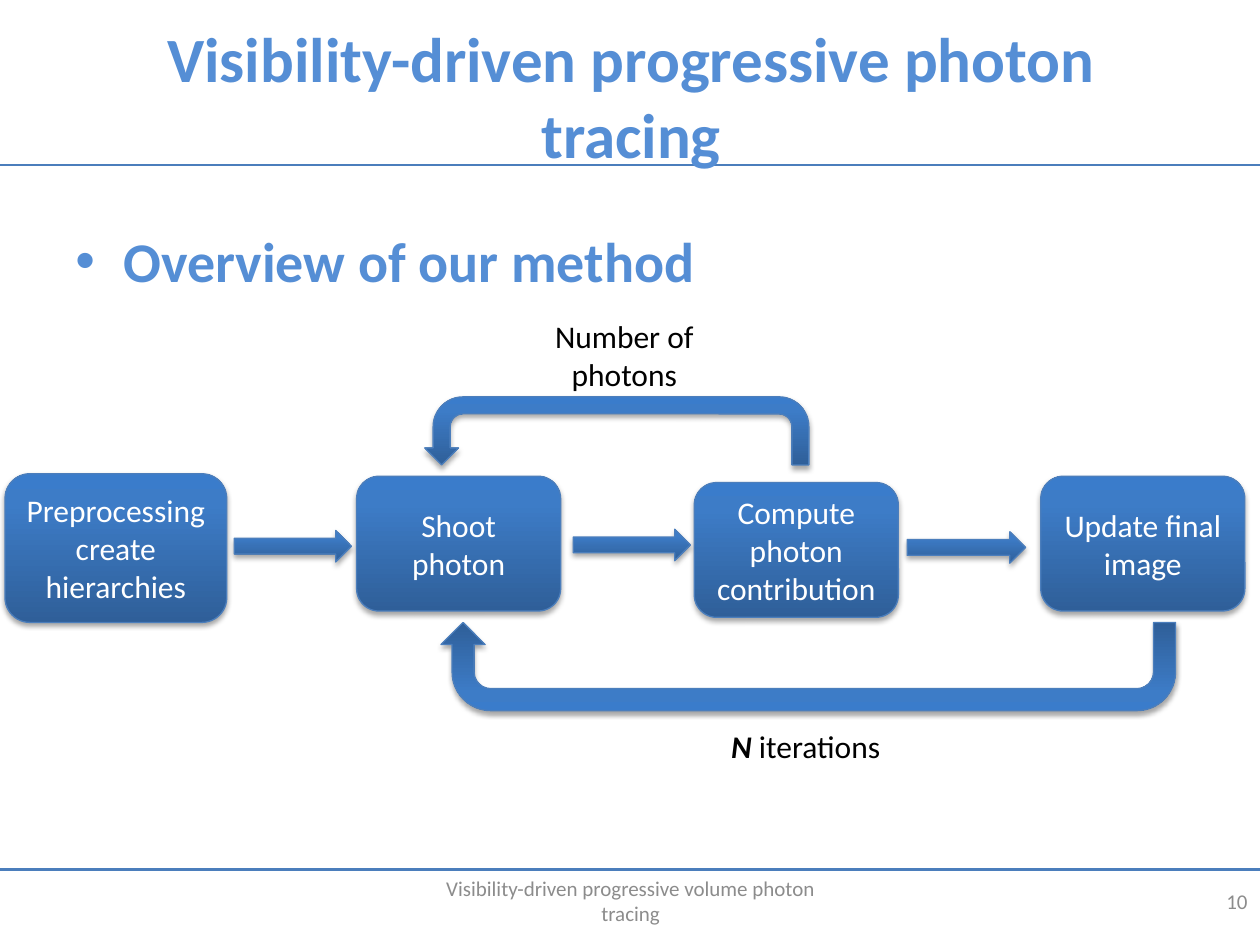
"""Build the method overview slide of a photon tracing talk."""
from lxml.etree import SubElement
from pptx import Presentation
from pptx.dml.color import RGBColor
from pptx.enum.shapes import MSO_CONNECTOR as Line, MSO_SHAPE as Shape
from pptx.enum.text import MSO_ANCHOR as Anchor, PP_ALIGN as Align
from pptx.oxml.ns import qn
from pptx.util import Inches, Pt

COLUMNS, ROWS = 10, 7.5
CELL = Inches(1)
RULE_ROWS = (6.9, 1.31)
EDGE = "4B7EBC"
GRADIENT = ((0, "2F5F99"), (80, "3D7CC7"), (100, "3A7CCB"))

HEADING = {"size": Pt(36), "bold": True, "color": "558ED5"}
TOPIC = {**HEADING, "size": Pt(32)}
LABEL = {"size": Pt(18), "color": "000000"}
VARIABLE = {**LABEL, "bold": True, "italic": True}
STEP = {"size": Pt(18), "color": "FFFFFF"}
FOOTER = {"size": Pt(12), "color": "8C8C8C"}

TEXTS = [
    ((0.51, 0.13, 9, 1.25), Anchor.MIDDLE, Align.CENTER,
     [("Visibility-driven progressive photon tracing", HEADING)]),
    ((0.5, 1.75, 9, 4.95), Anchor.TOP, Align.LEFT, [("Overview of our method", TOPIC)]),
    ((3.42, 6.95, 3.17, 0.4), Anchor.MIDDLE, Align.CENTER,
     [("Visibility-driven progressive volume photon tracing", FOOTER)]),
    ((7.67, 6.95, 2.33, 0.4), Anchor.MIDDLE, Align.RIGHT, [("10", FOOTER)]),
    ((4.12, 2.47, 1.67, 0.71), Anchor.TOP, Align.CENTER, [("Number of photons", LABEL)]),
    ((5.16, 5.72, 2.47, 0.4), Anchor.TOP, Align.CENTER,
     [("N ", VARIABLE), ("iterations", LABEL)]),
]
STEPS = [
    ((0.04, 3.76, 1.76, 1.18), ["Preprocessing", "create hierarchies"]),
    ((2.83, 3.78, 1.62, 1.07), ["Shoot photon"]),
    ((5.51, 3.83, 1.62, 1.07), ["Compute photon contribution"]),
    ((8.26, 3.78, 1.62, 1.07), ["Update final image"]),
]
ARROWS = [(1.86, 4.21, 0.93, 0.25), (4.55, 4.2, 0.93, 0.25), (7.2, 4.22, 0.94, 0.25)]
PHOTON_LOOP = (3.37, 3.15, 3.05, 0.54)
ITERATION_LOOP = (3.5, 4.94, 5.83, 0.7)
LOOP_BENDS = (0.25, 0.25, 0.25, 0.44, 1)


def rgb(code):
    """Turn a hex string into a colour."""
    return RGBColor.from_string(code)


def grid(*cells):
    """Turn grid positions into slide lengths."""
    return [round(cell * CELL) for cell in cells]


def add(parent, tag, **attributes):
    """Append a drawing element with the given attributes."""
    return SubElement(parent, qn(tag), {key: str(value) for key, value in attributes.items()})


def write(paragraph, words, style):
    """Add a run of words in the given style."""
    font = paragraph.add_run().font
    paragraph.runs[-1].text = words
    for name, value in {"name": "Calibri", **style}.items():
        if name == "color":
            font.color.rgb = rgb(value)
        else:
            setattr(font, name, value)


def add_text(slide, place, anchor, align, runs):
    """Add a wrapped text box with one paragraph."""
    frame = slide.shapes.add_textbox(*grid(*place)).text_frame
    frame.word_wrap, frame.vertical_anchor = True, anchor
    paragraph = frame.paragraphs[0]
    paragraph.alignment = align
    if runs[0][1] is TOPIC:
        indent = round(0.38 * CELL)
        layout = paragraph._p.get_or_add_pPr()
        layout.set("marL", str(indent))
        layout.set("indent", str(-indent))
        add(layout, "a:buFont", typeface="Arial")
        add(layout, "a:buChar", char="•")
    for words, style in runs:
        write(paragraph, words, style)


def add_block(slide, preset, place):
    """Add a shape with the blue gradient and a soft shadow."""
    block = slide.shapes.add_shape(preset, *grid(*place))
    block.fill.gradient()
    block.fill.gradient_angle = 90
    stops = block.element.spPr.find(qn("a:gradFill")).find(qn("a:gsLst"))
    for stop in list(stops):
        stops.remove(stop)
    for position, code in GRADIENT:
        add(add(stops, "a:gs", pos=position * 1000), "a:srgbClr", val=code)
    block.line.color.rgb = rgb(EDGE)
    block.line.width = Pt(0.75)
    block.shadow.inherit = False
    effects = block.element.spPr.find(qn("a:effectLst"))
    shadow = add(effects, "a:outerShdw", blurRad=Pt(3.1), dist=Pt(1.8), dir=90 * 60000,
                 rotWithShape=0)
    add(add(shadow, "a:srgbClr", val="000000"), "a:alpha", val=35000)
    return block


def add_step(slide, place, lines):
    """Add a rounded box naming one step."""
    frame = add_block(slide, Shape.ROUNDED_RECTANGLE, place).text_frame
    frame.word_wrap, frame.vertical_anchor = True, Anchor.MIDDLE
    for number, words in enumerate(lines):
        paragraph = frame.add_paragraph() if number else frame.paragraphs[0]
        paragraph.alignment = Align.CENTER
        write(paragraph, words, STEP)


def add_loop(slide, place):
    """Add a U-turn arrow."""
    loop = add_block(slide, Shape.U_TURN_ARROW, place)
    for number, bend in enumerate(LOOP_BENDS):
        loop.adjustments[number] = bend
    return loop


def main():
    """Build and save the slide."""
    deck = Presentation()
    deck.slide_width, deck.slide_height = grid(COLUMNS, ROWS)
    slide = deck.slides.add_slide(deck.slide_layouts[6])
    for row in RULE_ROWS:
        rule = slide.shapes.add_connector(Line.STRAIGHT, *grid(0, row, COLUMNS, row))
        rule.line.color.rgb = rgb(EDGE)
        rule.line.width = Pt(1.5)
        add(rule._element.spPr, "a:effectLst")
    for text in TEXTS:
        add_text(slide, *text)
    for step in STEPS:
        add_step(slide, *step)
    for place in ARROWS:
        add_block(slide, Shape.RIGHT_ARROW, place)
    add_loop(slide, PHOTON_LOOP).element.spPr.get_or_add_xfrm().set("flipH", "1")
    add_loop(slide, ITERATION_LOOP).rotation = 180
    deck.save("out.pptx")


if __name__ == "__main__":
    main()
